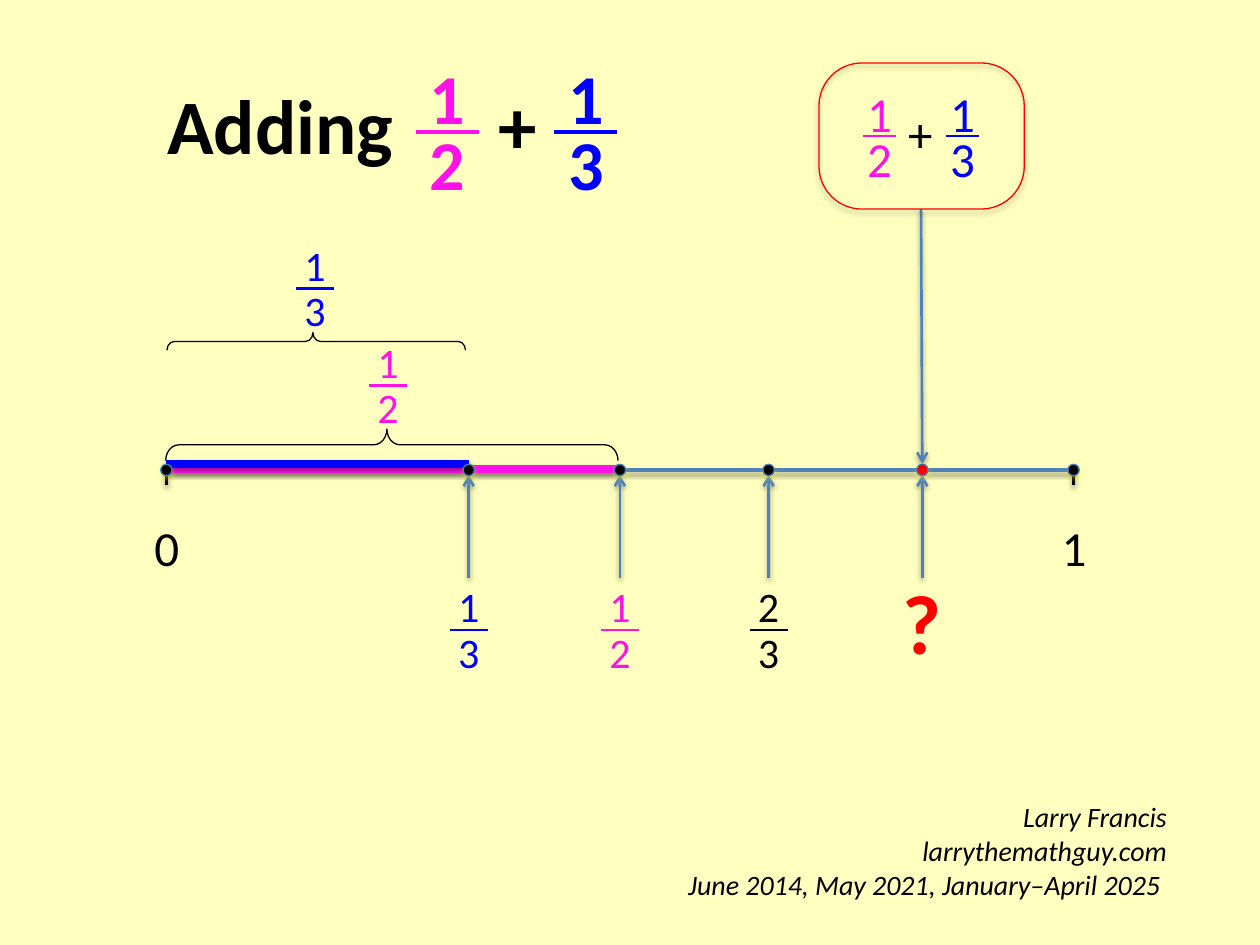
from lxml import etree
from pptx import Presentation
from pptx.dml.color import RGBColor
from pptx.enum import shapes, text
from pptx.oxml import ns
from pptx.util import Inches, Pt

BLACK, BLUE, PINK, RED = "000000", "0000FF", "FF11EA", "FF0000"
STEEL, RIM, YELLOW, CREAM = "4F81BD", "4B7EBC", "FFFF00", "FFFFBF"
LEFT, MID, RIGHT = text.PP_ALIGN.LEFT, text.PP_ALIGN.CENTER, text.PP_ALIGN.RIGHT
KIND = shapes.MSO_SHAPE

# font size: (bar width, bar weight, box width, box height, top rise, bottom rise)
FRACS = {
    24: (0.3, 1.5, 0.64, 0.5, 0.44, 0.08),
    28: (0.26, 1.5, 0.56, 0.55, 0.47, 0.11),
    40: (0.5, 2.25, 0.52, 0.77, 0.67, 0.14),
}


def color(code):
    return RGBColor.from_string(code)


def node(parent, tag, **attrs):
    return etree.SubElement(parent, ns.qn(tag), attrs)


def shade(shape, code=None, alpha=38, dist=1.6):
    """Give the shape a soft shadow below it, or none without a colour."""
    props = shape._element.spPr
    effects = node(props, "a:effectLst")
    if code:
        shadow = node(effects, "a:outerShdw", blurRad=str(Pt(3.1)),
                      dist=str(Pt(dist)), dir="5400000", rotWithShape="0")
        tint = node(shadow, "a:srgbClr", val=code)
        node(tint, "a:alpha", val=str(alpha * 1000))


class Board:
    def __init__(self, slide, face="Calibri"):
        self.slide, self.face = slide, face

    def label(self, words, left, top, width, height, size, code=BLACK,
              align=MID, bold=False, italic=False, after=0):
        box = self.slide.shapes.add_textbox(
            Inches(left), Inches(top), Inches(width), Inches(height))
        frame = box.text_frame
        frame.word_wrap = True
        frame.auto_size = text.MSO_AUTO_SIZE.SHAPE_TO_FIT_TEXT
        frame.text = words
        for para in frame.paragraphs:
            para.alignment = align
            para.space_after = Pt(after)
            font = para.font
            font.name, font.size = self.face, Pt(size)
            font.bold, font.italic = bold, italic
            font.color.rgb = color(code)

    def line(self, x1, y1, x2, y2, code, weight, shadow=True, arrow=False):
        link = self.slide.shapes.add_connector(
            shapes.MSO_CONNECTOR.STRAIGHT,
            Inches(x1), Inches(y1), Inches(x2), Inches(y2))
        link.line.color.rgb = color(code)
        link.line.width = Pt(weight)
        if arrow:
            node(link.line._get_or_add_ln(), "a:tailEnd", type="arrow")
        shade(link, BLACK if shadow else None)

    def arrow(self, x1, y1, x2, y2):
        self.line(x1, y1, x2, y2, STEEL, 1.5, arrow=True)

    def frac(self, upper, lower, x, y, code, size=24, bold=False):
        """Draw a fraction whose bar is centred on x, y."""
        bar, weight, width, height, *rises = FRACS[size]
        for digit, rise in zip((upper, lower), rises):
            self.label(digit, x - width / 2, y - rise, width, height,
                       size, code, bold=bold)
        self.line(x - bar / 2, y, x + bar / 2, y, code, weight, shadow=False)

    def shape(self, kind, left, top, width, height, rim, fill=None):
        item = self.slide.shapes.add_shape(
            kind, Inches(left), Inches(top), Inches(width), Inches(height))
        if fill:
            item.fill.solid()
            item.fill.fore_color.rgb = color(fill)
        else:
            item.fill.background()
        item.line.color.rgb = color(rim)
        item.line.width = Pt(0.75)
        return item

    def dot(self, x, y, fill=BLACK):
        side = 0.09
        item = self.shape(KIND.OVAL, x - side / 2, y - side / 2,
                          side, side, RIM, fill)
        shade(item, YELLOW, 35, 1.8)

    def brace(self, x, y, span, depth):
        """Draw a brace centred on x, y that points upward."""
        item = self.shape(KIND.RIGHT_BRACE, x - depth / 2, y - span / 2,
                          depth, span, BLACK)
        item.rotation = 270
        item.adjustments[0], item.adjustments[1] = 0.419, 0.489
        item.shadow.inherit = False

    def frame(self, left, top, width, height):
        item = self.shape(KIND.ROUNDED_RECTANGLE, left, top, width, height, RED)
        item.adjustments[0] = 0.294
        shade(item, BLACK, 35, 1.8)


def main():
    deck = Presentation()
    deck.slide_width, deck.slide_height = Inches(10), Inches(7.5)
    slide = deck.slides.add_slide(deck.slide_layouts[6])
    slide.background.fill.solid()
    slide.background.fill.fore_color.rgb = color(CREAM)
    board = Board(slide)

    # Title
    board.label("Adding", 1.23, 0.57, 2.1, 0.84, 44, align=LEFT, bold=True, after=12)
    board.label("+", 3.81, 0.57, 0.6, 0.84, 44, bold=True, after=12)
    board.frac("1", "3", 4.65, 1.05, BLUE, 40, True)
    board.frac("1", "2", 3.55, 1.05, PINK, 40, True)

    board.label("Larry Francis\nlarrythemathguy.com\v"
                "June 2014, May 2021, January–April 2025 ",
                3.21, 6.3, 6.15, 0.91, 16, align=RIGHT, italic=True)

    # Number line
    zero, third, half, thirds, total, one = 1.32, 3.72, 4.92, 6.1, 7.32, 8.52
    axis = 3.73
    for x, digit in ((zero, "0"), (one, "1")):
        board.line(x, axis, x, 3.85, BLACK, 2)
        board.label(digit, x - 0.41, 4.06, 0.83, 0.57, 28)
    board.line(zero, axis, one, axis, STEEL, 2)

    for x, upper, lower, code in ((third, "1", "3", BLUE),
                                  (thirds, "2", "3", BLACK),
                                  (half, "1", "2", PINK)):
        board.frac(upper, lower, x, 5, code)
    for x in (third, half, thirds, total):
        board.arrow(x, 4.59, x, 3.77)
    board.label("?", 7, 4.48, 0.64, 1.31, 48, RED, bold=True)

    # Lengths of the two addends
    board.line(zero, 3.72, half, 3.72, PINK, 4.5)
    board.line(zero, 3.68, third, 3.68, BLUE, 4.5)
    board.brace(2.51, 2.71, 2.37, 0.14)
    board.frac("1", "3", 2.5, 2.29, BLUE)
    board.frac("1", "2", 3.08, 3.06, PINK)
    board.brace(3.11, 3.53, 3.59, 0.25)

    for x in (zero, third, half, thirds, one):
        board.dot(x, axis)
    board.dot(total, axis, RED)

    # Sum pointing to its place
    board.arrow(7.31, 1.66, total, 3.68)
    board.frac("1", "2", 6.98, 1.08, PINK, 28)
    board.frac("1", "3", 7.64, 1.08, BLUE, 28)
    board.label("+", 7.11, 0.77, 0.29, 0.55, 28, align=LEFT)
    board.frame(6.5, 0.5, 1.63, 1.16)

    deck.save("out.pptx")


if __name__ == "__main__":
    main()
